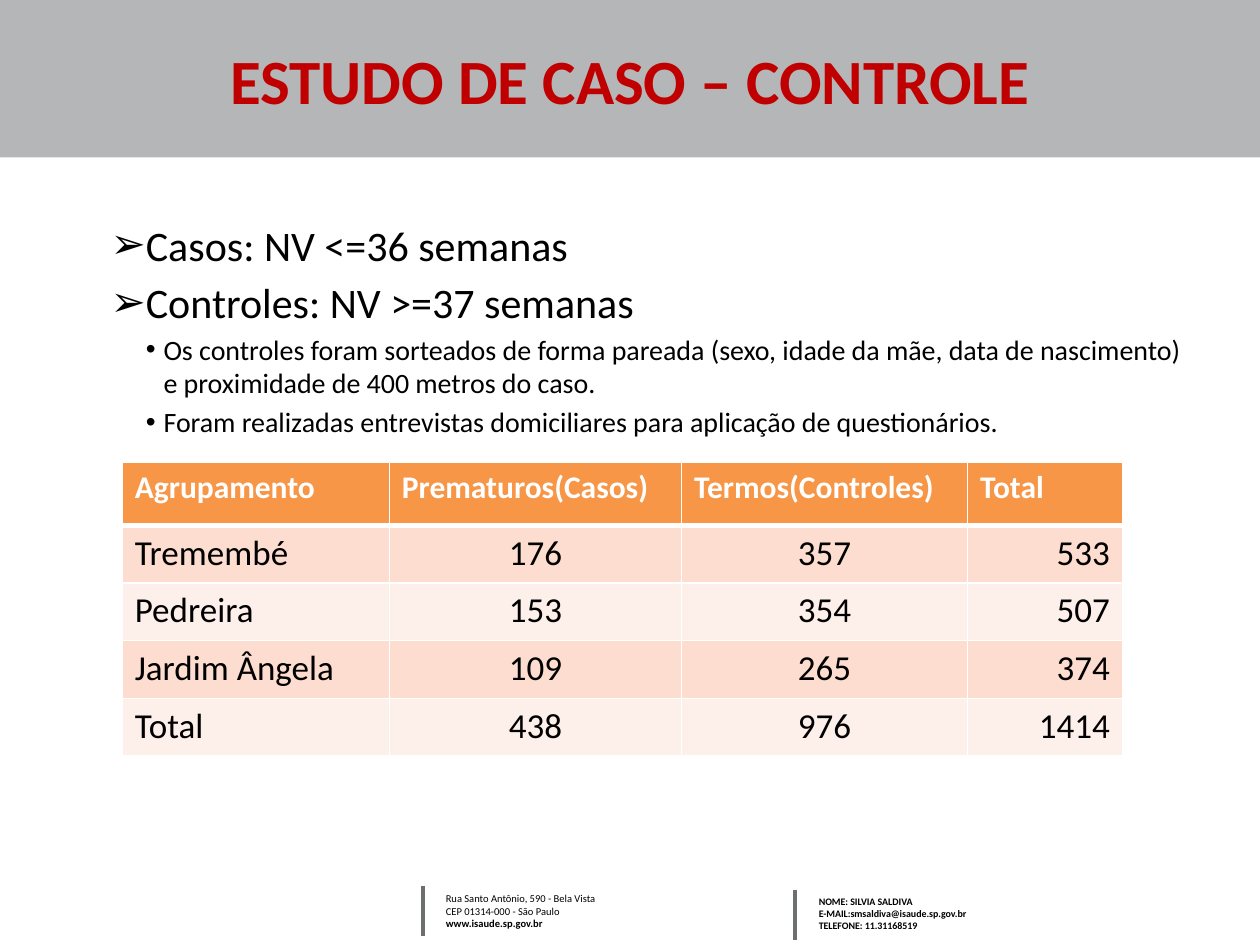
import pptx
import pptx.dml.color
import pptx.enum.shapes
import pptx.enum.text
import pptx.oxml
import pptx.oxml.ns
import pptx.util

Inches = pptx.util.Inches
Pt = pptx.util.Pt
ALIGN = pptx.enum.text.PP_ALIGN
ANCHOR = pptx.enum.text.MSO_ANCHOR
NS = pptx.oxml.ns.nsdecls("a")


def color(code):
    """Turn a hex string into a colour."""
    return pptx.dml.color.RGBColor.from_string(code)


def node(xml):
    """Parse one drawing element."""
    return pptx.oxml.parse_xml(xml)


def write(par, text, size=18, ink="000000", bold=False, align=ALIGN.LEFT,
          before=0, bullet=None, left=0, hang=0):
    """Put formatted text in a paragraph."""
    if bullet:
        props = par._p.get_or_add_pPr()
        props.set("marL", str(Inches(left)))
        props.set("indent", str(-Inches(hang)))
        props.append(node(f'<a:buFont {NS} typeface="Arial"/>'))
        props.append(node(f'<a:buChar {NS} char="{bullet}"/>'))
    par.alignment = align
    par.space_before = Pt(before)
    run = par.add_run()
    run.text = text
    run.font.name = "Calibri"
    run.font.size = Pt(size)
    run.font.bold = bold
    run.font.color.rgb = color(ink)


def fill_box(frame, lines):
    """Write one paragraph for each pair of text and format."""
    for i, (text, style) in enumerate(lines):
        par = frame.add_paragraph() if i else frame.paragraphs[0]
        write(par, text, **style)


def add_band(slide, x, y, w, h):
    """Draw the half-clear grey band."""
    band = slide.shapes.add_shape(
        pptx.enum.shapes.MSO_SHAPE.RECTANGLE,
        Inches(x), Inches(y), Inches(w), Inches(h))
    band.shadow.inherit = False
    band.line.fill.background()
    band.fill.solid()
    band.fill.fore_color.rgb = color("6D6E70")
    tint = band._element.spPr.find(".//" + pptx.oxml.ns.qn("a:srgbClr"))
    tint.append(node(f'<a:alpha {NS} val="50000"/>'))


def add_title(slide, text, x, y, w, h):
    """Place the title in front of the band."""
    title = slide.shapes.title
    title.left, title.top = Inches(x), Inches(y)
    title.width, title.height = Inches(w), Inches(h)
    frame = title.text_frame
    frame.word_wrap = True
    frame.vertical_anchor = ANCHOR.TOP
    frame.margin_top = Inches(0.03)
    write(frame.paragraphs[0], text, size=36, ink="C00000", bold=True,
          align=ALIGN.CENTER)
    title._element.getparent().append(title._element)


def add_note(slide, lines, x, y, w, h, gap, wrap):
    """Place a footer block with a bar at its left."""
    bar = slide.shapes.add_connector(
        pptx.enum.shapes.MSO_CONNECTOR.STRAIGHT,
        Inches(x), Inches(y), Inches(x), Inches(y + h))
    bar.line.color.rgb = color("6D6E70")
    bar.line.width = Pt(2.25)
    bar._element.spPr.append(node(f"<a:effectLst {NS}/>"))
    box = slide.shapes.add_textbox(
        Inches(x + gap), Inches(y), Inches(w), Inches(h))
    box.text_frame.word_wrap = wrap
    fill_box(box.text_frame, lines)


def add_body(slide, x, y, w, h):
    """Place the bullet list."""
    box = slide.shapes.add_textbox(Inches(x), Inches(y), Inches(w), Inches(h))
    frame = box.text_frame
    frame.word_wrap = True
    frame.margin_top = Inches(0.42)
    main = dict(size=24, bullet="➢", left=0.46, hang=0.18)
    sub = dict(size=16, bullet="•", left=0.7, hang=0.14, before=3)
    fill_box(frame, [
        ("Casos: NV <=36 semanas", main),
        ("Controles: NV >=37 semanas", dict(main, before=4)),
        ("Os controles foram sorteados de forma pareada (sexo, idade da mãe, "
         "data de nascimento) e proximidade de 400 metros do caso.", sub),
        ("Foram realizadas entrevistas domiciliares para aplicação de "
         "questionários.", sub),
    ])


def add_edge(cell, side, width):
    """Give one side of a cell a white line."""
    cell._tc.get_or_add_tcPr().append(node(
        f'<a:ln{side} {NS} w="{Pt(width)}"><a:solidFill>'
        f'<a:srgbClr val="FFFFFF"/></a:solidFill></a:ln{side}>'))


def add_grid(slide, rows, cols, x, y, w, h):
    """Place the table of groups."""
    grid = slide.shapes.add_table(
        len(rows), len(cols), Inches(x), Inches(y), Inches(w), Inches(h)).table
    for col, width in zip(grid.columns, cols):
        col.width = Inches(width)
    head = 0.5
    for i, row in enumerate(grid.rows):
        row.height = Inches((h - head) / (len(rows) - 1) if i else head)
    sides = [ALIGN.LEFT, ALIGN.CENTER, ALIGN.CENTER, ALIGN.RIGHT]
    for i, row in enumerate(rows):
        for j, text in enumerate(row):
            cell = grid.cell(i, j)
            for side in "LRTB":
                thick = (i, side) in ((0, "B"), (1, "T"))
                add_edge(cell, side, 3 if thick else 1)
            cell.fill.solid()
            par = cell.text_frame.paragraphs[0]
            if i:
                cell.fill.fore_color.rgb = color("FCDDCF" if i % 2 else "FDEFE9")
                write(par, text, size=20, align=sides[j])
            else:
                cell.fill.fore_color.rgb = color("F79646")
                write(par, text, ink="FFFFFF", bold=True)


def main():
    """Build and save the slide."""
    deck = pptx.Presentation()
    deck.slide_width, deck.slide_height = Inches(10), Inches(7.5)
    slide = deck.slides.add_slide(deck.slide_layouts[5])
    add_band(slide, 0, 0, 10, 1.25)
    plain, bold = dict(size=6), dict(size=6, bold=True)
    add_note(slide, [
        ("Rua Santo Antônio, 590 - Bela Vista", plain),
        ("CEP 01314-000 - São Paulo", plain),
        ("www.isaude.sp.gov.br", bold),
    ], 3.36, 7.03, 1.4, 0.4, gap=0.08, wrap=False)
    small = dict(size=5.7, bold=True)
    add_note(slide, [
        ("NOME: SILVIA SALDIVA", small),
        ("E-MAIL:smsaldiva@isaude.sp.gov.br", small),
        ("TELEFONE: 11.31168519", small),
    ], 6.31, 7.06, 2.31, 0.4, gap=0.09, wrap=True)
    add_title(slide, "ESTUDO DE CASO – CONTROLE", 0.5, 0.3, 9, 1.25)
    add_body(slide, 0.5, 1.32, 9, 5.38)
    add_grid(slide, [
        ["Agrupamento", "Prematuros(Casos)", "Termos(Controles)", "Total"],
        ["Tremembé", "176", "357", "533"],
        ["Pedreira", "153", "354", "507"],
        ["Jardim Ângela", "109", "265", "374"],
        ["Total", "438", "976", "1414"],
    ], [2.12, 2.32, 2.27, 1.23], 0.97, 3.67, 7.94, 2.33)
    deck.save("out.pptx")


if __name__ == "__main__":
    main()
